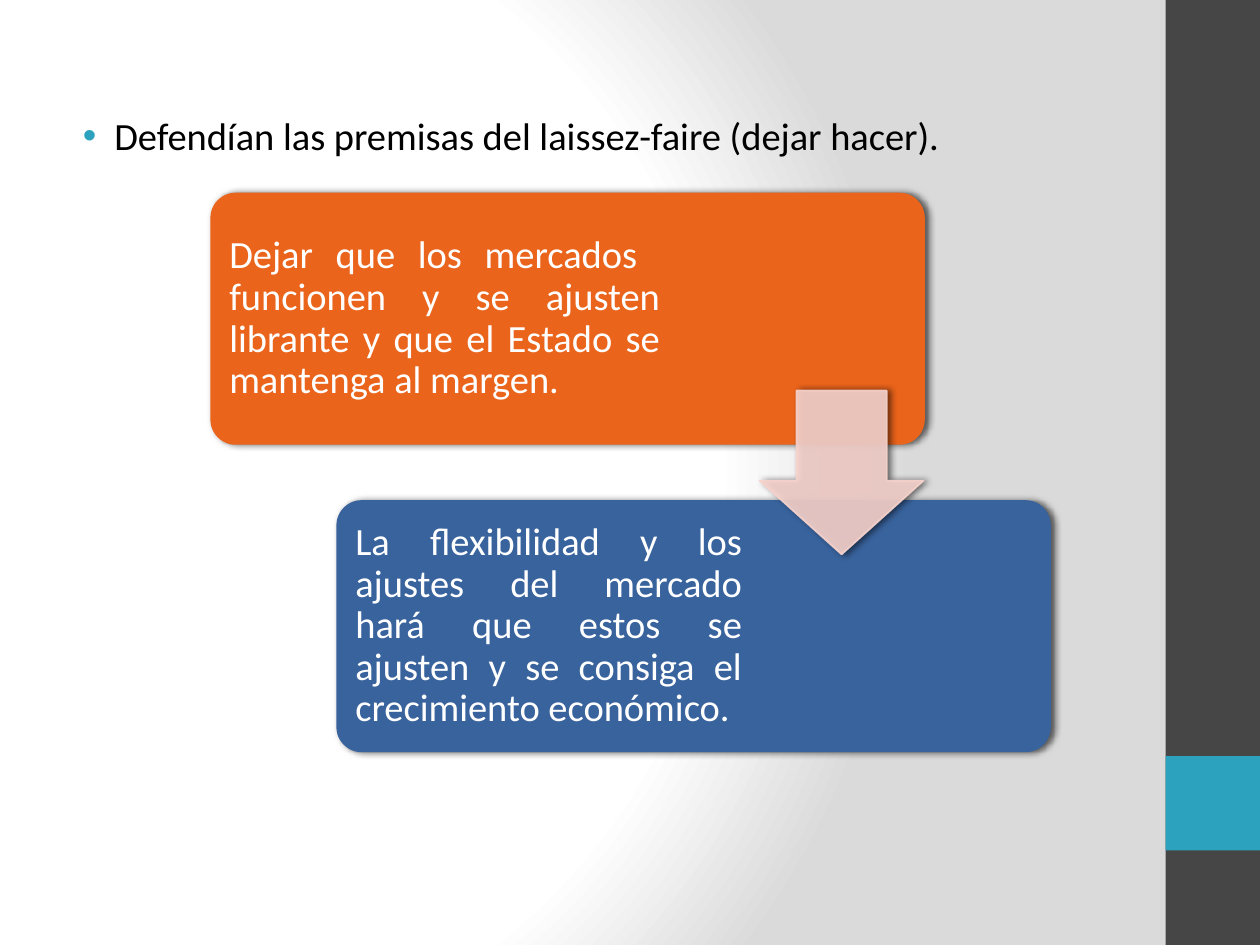
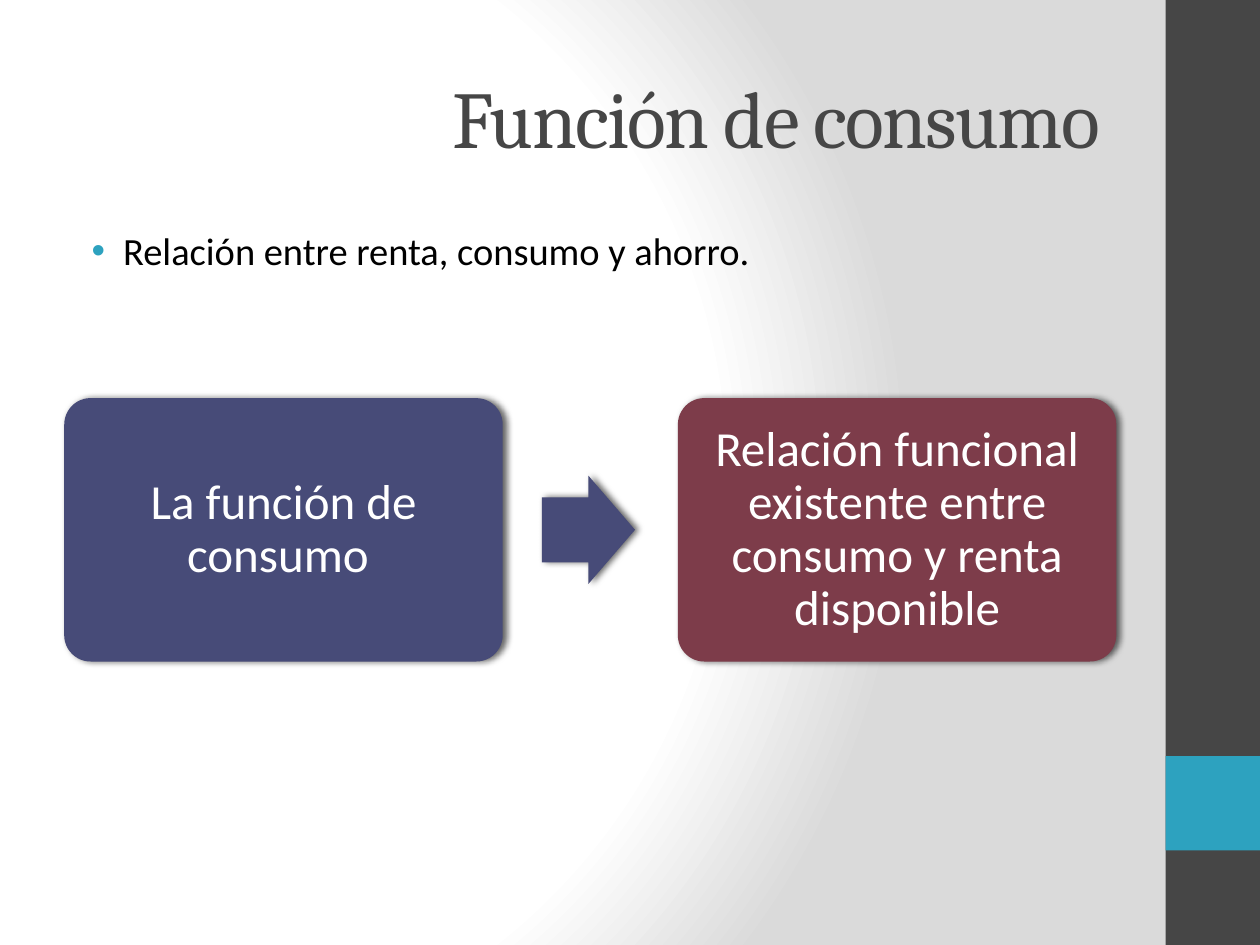
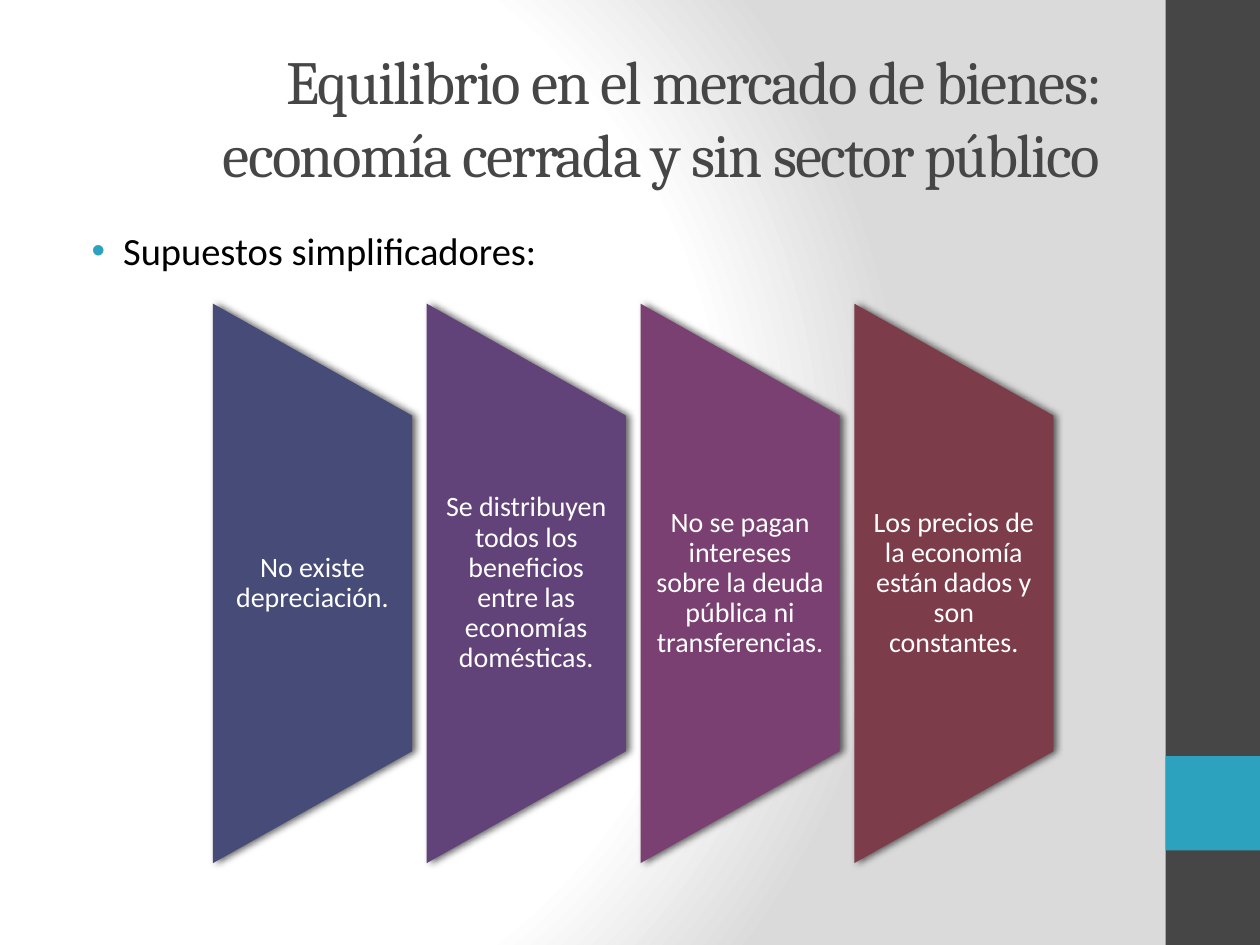
from lxml.etree import SubElement
from pptx import Presentation
from pptx.dml.color import RGBColor
from pptx.enum.shapes import MSO_SHAPE as Preset
from pptx.enum.text import MSO_ANCHOR as Anchor, PP_ALIGN as Align
from pptx.oxml import parse_xml
from pptx.oxml.ns import nsdecls, qn
from pptx.util import Inches, Pt

WHITE, BLACK, SLATE, TEAL = "FFFFFF", "000000", "464646", "2DA2BF"
ORANGE, BLUE, PINK = "EB641B", "39639D", "F7D3CD"
INDIGO, PURPLE, PLUM, WINE = "474B78", "61437A", "7B4072", "7D3C4A"
HEADING_FONT, BODY_FONT = "Cambria", "Calibri"
TITLE_BOX = (0.5, 0.3, 8.33, 1.25)
BODY_BOX = (0.5, 1.75, 8.33, 5.25)
CARD_PAD = 0.06

GRADIENT = f"""<a:gradFill {nsdecls("a")} rotWithShape="1"><a:gsLst>
<a:gs pos="0"><a:srgbClr val="FFFFFF"/></a:gs>
<a:gs pos="75000"><a:srgbClr val="FFFFFF"/></a:gs>
<a:gs pos="100000"><a:srgbClr val="DADADA"/></a:gs></a:gsLst>
<a:path path="circle"><a:fillToRect l="20000" t="50000" r="100000" b="50000"/></a:path>
</a:gradFill>"""


def color(hex_code):
    return RGBColor.from_string(hex_code)


def inches(box):
    return [Inches(length) for length in box]


def set_background(master):
    master.background.fill.solid()
    properties = master.element.find(".//" + qn("p:bgPr"))
    properties.replace(properties.find(qn("a:solidFill")), parse_xml(GRADIENT))


def add_shape(slide, preset, box, fill, adjustments=()):
    shape = slide.shapes.add_shape(preset, *inches(box))
    shape.shadow.inherit = False
    shape.fill.solid()
    shape.fill.fore_color.rgb = color(fill)
    shape.line.fill.background()
    for index, value in enumerate(adjustments):
        shape.adjustments[index] = value
    return shape


def add_shadow(shape):
    effects = shape._element.spPr.find(qn("a:effectLst"))
    shadow = SubElement(effects, qn("a:outerShdw"), blurRad=str(Pt(4)),
                        dist=str(Pt(2)), dir="0", rotWithShape="0")
    tint = SubElement(shadow, qn("a:srgbClr"), val=BLACK)
    SubElement(tint, qn("a:alpha"), val="60000")


def add_raised(slide, preset, box, fill, adjustments=()):
    shape = add_shape(slide, preset, box, fill, adjustments)
    add_shadow(shape)
    return shape


def add_text(slide, box, text, size, hue, align=None, font=BODY_FONT,
             anchor=Anchor.MIDDLE, insets=(0.1, 0.05), spacing=None):
    frame = slide.shapes.add_textbox(*inches(box)).text_frame
    frame.word_wrap = True
    frame.vertical_anchor = anchor
    frame.margin_left = frame.margin_right = Inches(insets[0])
    frame.margin_top = frame.margin_bottom = Inches(insets[1])
    paragraph = frame.paragraphs[0]
    paragraph.text = text
    paragraph.alignment = align
    paragraph.line_spacing = spacing
    run_font = paragraph.runs[0].font
    run_font.name, run_font.size = font, Pt(size)
    run_font.color.rgb = color(hue)
    return paragraph


def add_title(slide, text, size):
    title = add_text(slide, TITLE_BOX, text, size, SLATE, Align.RIGHT, HEADING_FONT)
    title.runs[0].font._element.set("spc", "-100")


def add_bullet(slide, box, text, align=Align.LEFT):
    bullet = add_text(slide, box, text, 22, BLACK, align, anchor=Anchor.TOP)
    properties = bullet._p.get_or_add_pPr()
    properties.set("marL", str(Inches(0.38)))
    properties.set("indent", str(Inches(-0.25)))
    bullet_color = SubElement(properties, qn("a:buClr"))
    SubElement(bullet_color, qn("a:srgbClr"), val=TEAL)
    SubElement(properties, qn("a:buFont"), typeface="Arial")
    SubElement(properties, qn("a:buChar"), char="•")


def add_card(slide, box, fill, text, size, align, inset, text_width=None):
    """Rounded card with its text kept inside the padding."""
    left, top, width, height = box
    add_raised(slide, Preset.ROUNDED_RECTANGLE, box, fill, [0.1])
    text_box = (left + CARD_PAD, top + CARD_PAD,
                text_width or width - 2 * CARD_PAD, height - 2 * CARD_PAD)
    add_text(slide, text_box, text, size, WHITE, align,
             insets=(inset, inset), spacing=0.9)


def add_staircase(slide, box, steps):
    """Two cards stepping down to the right, joined by a translucent arrow."""
    left, top, width, height = box
    card_width, card_height, arrow_size = 5.67, 2, 1.3
    for index, (text, fill, text_width) in enumerate(steps):
        card = (left + index * (width - card_width),
                top + index * (height - card_height), card_width, card_height)
        add_card(slide, card, fill, text, 22, Align.JUSTIFY, 0.09, text_width)
    arrow_box = (left + card_width - arrow_size - 0.01,
                 top + (height - arrow_size) / 2, arrow_size, arrow_size)
    arrow = add_raised(slide, Preset.DOWN_ARROW, arrow_box, PINK, [0.55, 0.45])
    arrow.line.color.rgb = color(PINK)
    arrow.line.width = Pt(1)
    for tint in arrow._element.spPr.findall(".//" + qn("a:solidFill") + "/" + qn("a:srgbClr")):
        SubElement(tint, qn("a:alpha"), val="90000")


def add_definition(slide, box, term, meaning):
    """Term and meaning at either end of the box, with an arrow between."""
    left, top, width, height = box
    card_width, arrow_width, arrow_height = 3.48, 0.74, 0.86
    meaning_left = left + width - card_width
    add_card(slide, (left, top, card_width, height), INDIGO, term, 28, Align.CENTER, 0.12)
    arrow_box = (left + card_width + 0.31, top + (height - arrow_height) / 2,
                 arrow_width, arrow_height)
    add_raised(slide, Preset.RIGHT_ARROW, arrow_box, INDIGO, [0.6, 0.5])
    add_card(slide, (meaning_left, top, card_width, height), WINE, meaning, 28,
             Align.CENTER, 0.12)


def add_assumptions(slide, box, assumptions):
    """Row of trapezoids lying on their side, with level text on top."""
    left, top, width, height = box
    column_width = 1.58
    pitch = (width - column_width) / (len(assumptions) - 1)
    turn = (height - column_width) / 2
    for index, (text, fill) in enumerate(assumptions):
        column_left = left + index * pitch
        trapezoid = add_raised(slide, Preset.FLOWCHART_MANUAL_OPERATION,
                               (column_left - turn, top + turn, height, column_width), fill)
        trapezoid.rotation = 270
        add_text(slide, (column_left, top + height / 5, column_width, height * 3 / 5),
                 text, 16, WHITE, Align.CENTER, insets=(0.11, 0), spacing=0.9)


def new_slide(deck):
    slide = deck.slides.add_slide(deck.slide_layouts[6])
    # Side band with its accent square
    add_shape(slide, Preset.RECTANGLE, (9.25, 0, 0.75, 7.5), SLATE)
    add_shape(slide, Preset.RECTANGLE, (9.25, 6, 0.75, 0.75), TEAL)
    return slide


def main():
    deck = Presentation()
    deck.slide_width, deck.slide_height = Inches(10), Inches(7.5)
    set_background(deck.slide_master)

    # Laissez-faire
    slide = new_slide(deck)
    add_bullet(slide, (0.43, 0.84, 8.33, 5.25),
               "Defendían las premisas del laissez-faire (dejar hacer).", Align.JUSTIFY)
    add_staircase(slide, (1.67, 1.53, 6.67, 4.44), [
        ("Dejar que los mercados  funcionen y se ajusten librante y que el Estado "
         "se mantenga al margen.", ORANGE, 3.6),
        ("La flexibilidad y los ajustes del mercado hará que estos se ajusten y se "
         "consiga el crecimiento económico.", BLUE, 3.25),
    ])

    # Consumption function
    slide = new_slide(deck)
    add_title(slide, "Función de consumo", 46)
    add_bullet(slide, BODY_BOX, "Relación entre renta, consumo y ahorro.")
    add_definition(slide, (0.51, 3.16, 8.35, 2.09), "La función de consumo ",
                   "Relación funcional existente entre consumo y renta disponible")

    # Goods market equilibrium
    slide = new_slide(deck)
    add_title(slide, "Equilibrio en el mercado de bienes: economía cerrada y sin "
                     "sector público", 35)
    add_bullet(slide, BODY_BOX, "Supuestos simplificadores:")
    add_assumptions(slide, (1.69, 2.41, 6.67, 4.44), [
        ("No existe depreciación.", INDIGO),
        ("Se distribuyen todos los beneficios entre las economías domésticas.", PURPLE),
        ("No se pagan intereses sobre la deuda pública ni transferencias.", PLUM),
        ("Los precios de la economía están dados y son constantes.", WINE),
    ])

    deck.save("out.pptx")


if __name__ == "__main__":
    main()
